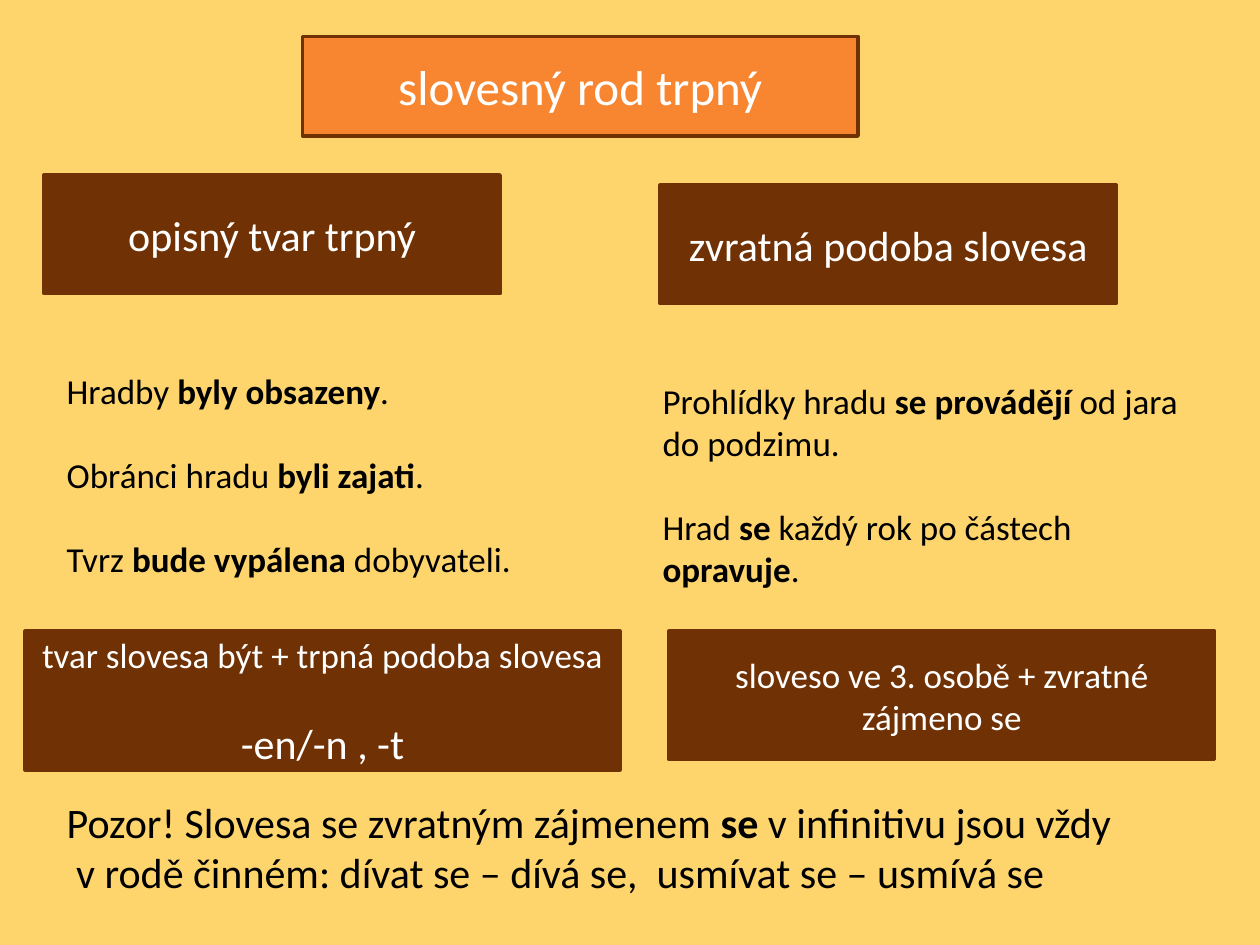
import pptx
import pptx.dml.color
import pptx.enum.shapes
import pptx.enum.text
import pptx.util

Pt = pptx.util.Pt
Anchor = pptx.enum.text.MSO_ANCHOR
Align = pptx.enum.text.PP_ALIGN
AutoSize = pptx.enum.text.MSO_AUTO_SIZE

SAND, ORANGE, BROWN = "FED46C", "F88631", "703204"
WHITE, BLACK = "FFFFFF", "000000"


def color(hex_string):
    return pptx.dml.color.RGBColor.from_string(hex_string)


class Board:
    """Holds the common style and the slide being built."""

    font = "Calibri"
    line_width = 2

    def __init__(self, slide):
        self.slide = slide
        slide.background.fill.solid()
        slide.background.fill.fore_color.rgb = color(SAND)

    def add_words(self, frame, paragraphs, ink, align, gap=0):
        """Each paragraph is (size, runs); runs alternate plain and bold."""
        frame.word_wrap = True
        for number, (size, runs) in enumerate(paragraphs):
            paragraph = frame.add_paragraph() if number else frame.paragraphs[0]
            paragraph.alignment = align
            paragraph.space_before = Pt(gap if number else 0)
            for position, words in enumerate(runs):
                for row, part in enumerate(words.split("\n")):
                    if row:
                        paragraph.add_line_break()
                    run = paragraph.add_run()
                    run.text = part
                    run.font.name = self.font
                    run.font.size = Pt(size)
                    run.font.bold = position % 2 == 1
                    run.font.color.rgb = color(ink)

    def panel(self, shape, fill, paragraphs, gap=0):
        """Paint a shape as a framed panel with centred white text."""
        shape.fill.solid()
        shape.fill.fore_color.rgb = color(fill)
        shape.line.color.rgb = color(BROWN)
        shape.line.width = Pt(self.line_width)
        shape.text_frame.auto_size = AutoSize.NONE
        shape.text_frame.vertical_anchor = Anchor.MIDDLE
        self.add_words(shape.text_frame, paragraphs, WHITE, Align.CENTER, gap)

    def title(self, left, top, width, height, words):
        heading = self.slide.shapes.title
        heading.left, heading.top = Pt(left), Pt(top)
        heading.width, heading.height = Pt(width), Pt(height)
        self.panel(heading, ORANGE, [(28, [words])])

    def box(self, left, top, width, height, paragraphs, gap=0):
        shape = self.slide.shapes.add_shape(
            pptx.enum.shapes.MSO_SHAPE.RECTANGLE,
            Pt(left), Pt(top), Pt(width), Pt(height))
        shape.shadow.inherit = False
        self.panel(shape, BROWN, paragraphs, gap)

    def text(self, left, top, width, height, paragraphs, gap=0):
        frame = self.slide.shapes.add_textbox(
            Pt(left), Pt(top), Pt(width), Pt(height)).text_frame
        self.add_words(frame, paragraphs, BLACK, Align.LEFT, gap)


def main():
    deck = pptx.Presentation()
    deck.slide_width, deck.slide_height = Pt(720), Pt(540)
    board = Board(deck.slides.add_slide(deck.slide_layouts[5]))

    board.title(172.8, 20.9, 317.5, 56.9, "slovesný rod trpný")

    for left, top, form in ((25.2, 100, "opisný tvar trpný"),
                            (377.3, 105.8, "zvratná podoba slovesa")):
        board.box(left, top, 260.6, 67.7, [(24, [form])])

    board.text(31, 207.4, 272.2, 177.1, [
        (20, ["Hradby ", "byly obsazeny", "."]),
        (20, ["Obránci hradu ", "byli zajati", "."]),
        (20, ["Tvrz ", "bude vypálena ", "dobyvateli."]),
    ], gap=24)
    board.text(371.5, 213.1, 323.3, 128.2, [
        (20, ["Prohlídky hradu ", "se provádějí ", "od jara do podzimu."]),
        (20, ["Hrad ", "se", " každý rok po částech ", "opravuje", "."]),
    ], gap=24)

    board.box(14.4, 360.7, 339.8, 79.2, [
        (20, ["tvar slovesa být + trpná podoba slovesa"]),
        (24, ["-en/-n , -t"]),
    ], gap=24)
    board.box(382.3, 360.7, 311.8, 73.4,
              [(20, ["sloveso ve 3. osobě + zvratné zájmeno se"])])

    board.text(31, 451.4, 668.9, 65.5, [
        (24, ["Pozor! Slovesa se zvratným zájmenem ", "se ",
              "v infinitivu jsou vždy\n"
              " v rodě činném: dívat se – dívá se,  usmívat se – usmívá se"]),
    ])
    deck.save("out.pptx")


if __name__ == "__main__":
    main()
